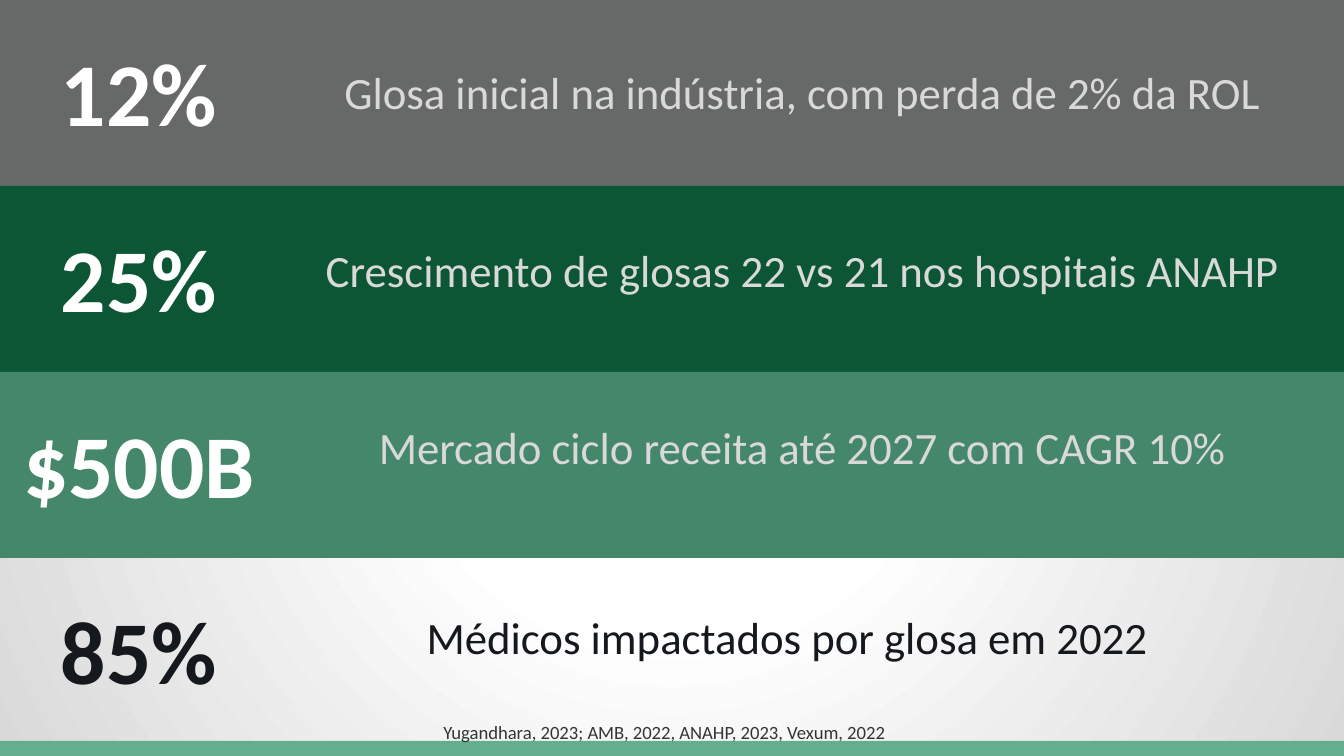
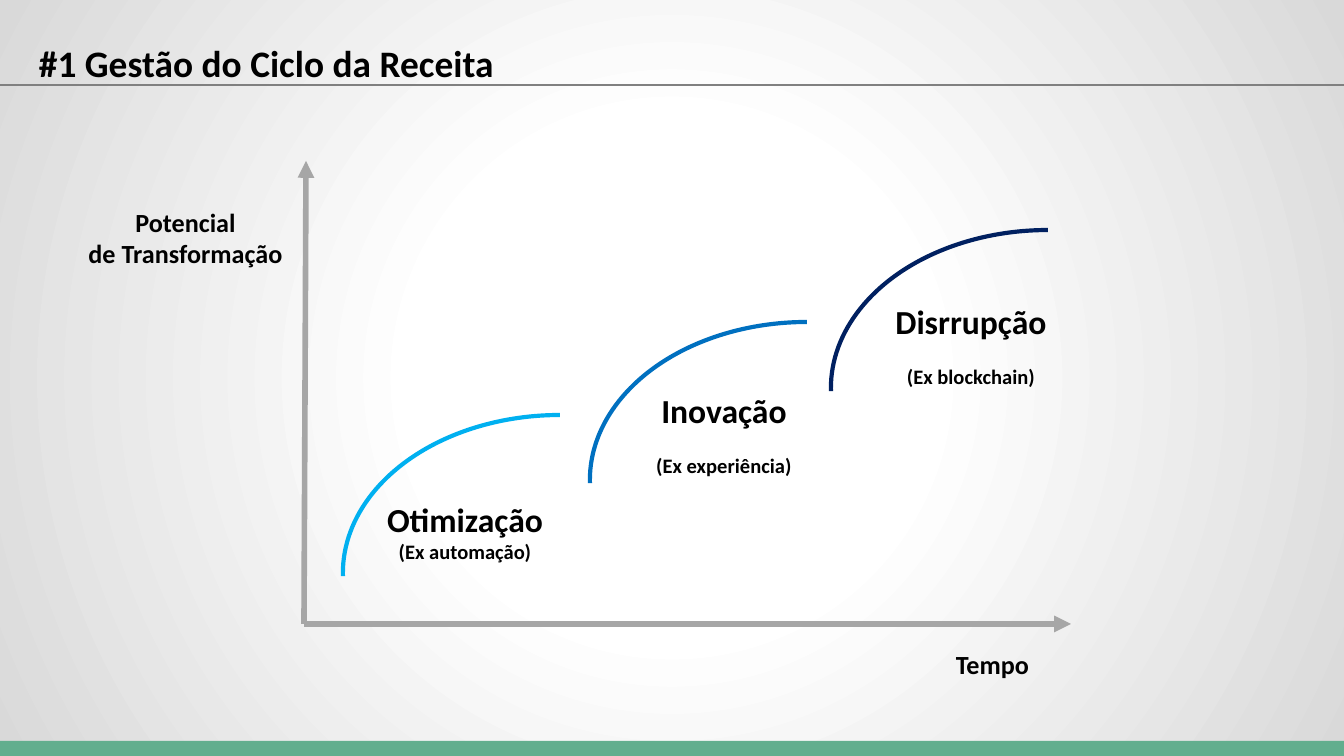
from pptx import Presentation
from pptx.dml.color import RGBColor
from pptx.enum.shapes import MSO_CONNECTOR as Link, MSO_SHAPE as Kind
from pptx.enum.text import MSO_ANCHOR as Anchor, MSO_AUTO_SIZE as Auto, PP_ALIGN as Align
from pptx.oxml import parse_xml as to_xml
from pptx.oxml.ns import nsdecls, qn
from pptx.util import Pt
from lxml.etree import SubElement as Sub

SCALE = 914400 / 134.4
WIDE, HIGH = 1344, 756
FONT = "Calibri"
WHITE, BLACK, INK, PALE = "FFFFFF", "000000", "15181C", "D9D9D9"
MINT, RULE, AXIS, NOTE = "62AE8E", "808080", "A6A6A6", "333434"
STOPS = ((0, WHITE), (33, WHITE), (100, PALE), (100, "B3B3B3"))


def px(*nums):
    return [round(n * SCALE) for n in nums]


def rgb(code):
    return RGBColor.from_string(code)


def rect(slide, box, color):
    shape = slide.shapes.add_shape(Kind.RECTANGLE, *px(*box))
    shape.shadow.inherit = False
    shape.fill.solid()
    shape.fill.fore_color.rgb = rgb(color)
    shape.line.fill.background()


def line(slide, ends, color, width, arrow=False):
    link = slide.shapes.add_connector(Link.STRAIGHT, *px(*ends))
    link.line.color.rgb = rgb(color)
    link.line.width = Pt(width)
    if arrow:
        Sub(link.line._get_or_add_ln(), qn("a:tailEnd"), type="triangle")
    Sub(link.element.spPr, qn("a:effectLst"))


def text(slide, box, words, sizes, color, bold=True, align=Align.CENTER,
         anchor=Anchor.TOP, inset=(13, 13), grow=False):
    """Add a text box; sizes holds one point size per paragraph."""
    frame = slide.shapes.add_textbox(*px(*box)).text_frame
    frame.text = words
    frame.word_wrap = True
    frame.auto_size = Auto.SHAPE_TO_FIT_TEXT if grow else Auto.NONE
    frame.vertical_anchor = anchor
    frame.margin_left = frame.margin_right = px(inset[0])[0]
    frame.margin_top = frame.margin_bottom = px(inset[1])[0]
    for para, size in zip(frame.paragraphs, sizes):
        para.alignment = align
        for run in para.runs:
            font = run.font
            font.name, font.size, font.bold = FONT, Pt(size), bold
            font.color.rgb = rgb(color)
    return frame.paragraphs


def page(deck):
    """Blank slide with the shared radial background and bottom band."""
    slide = deck.slides.add_slide(deck.slide_layouts[6])
    slide.background.fill.solid()
    stops = "".join(f'<a:gs pos="{pos * 1000}"><a:srgbClr val="{code}"/></a:gs>'
                    for pos, code in STOPS)
    grad = to_xml(
        f'<a:gradFill {nsdecls("a")} rotWithShape="1"><a:gsLst>{stops}</a:gsLst>'
        '<a:path path="circle"><a:fillToRect l="50000" t="50000" r="50000" '
        'b="50000"/></a:path></a:gradFill>')
    back = slide.element.cSld.bg.bgPr
    back.replace(back[0], grad)
    rect(slide, (0, 741, WIDE, 15), MINT)
    return slide


def fact(slide, box, fill, figure, label, shift):
    """One full-width row: a big figure and its label."""
    left, top, wide, high = box
    if fill:
        rect(slide, box, fill)
    text(slide, (left, top + 25, 278, 132), figure, [48],
         WHITE if fill else INK, anchor=Anchor.BOTTOM)
    dx, dy = shift
    para = text(slide, (left + dx, top + dy, 1095, 69), label, [24],
                PALE if fill else INK, bold=False)[0]
    para.space_before = Pt(6)
    para._p.get_or_add_pPr().set("marL", "76200")


def facts(deck):
    slide = page(deck)
    step = 186
    rows = (
        ("666967", "12%", "Glosa inicial na indústria, com perda de 2% da ROL", (249, 52)),
        ("0C5635", "25%", "Crescimento de glosas 22 vs 21 nos hospitais ANAHP", (249, 44)),
        ("45876B", "$500B", "Mercado ciclo receita até 2027 com CAGR 10%", (249, 35)),
        (None, "85%", "Médicos impactados por glosa em 2022", (234, 39)),
    )
    for i, row in enumerate(rows):
        fact(slide, (0, i * step, WIDE, step), *row)
    # Sources
    text(slide, (285, 714, 758, 36), "Yugandhara, 2023; AMB, 2022, ANAHP, 2023, Vexum, 2022",
         [10], NOTE, bold=False, inset=(13, 7), grow=True)


def head(slide, box, words):
    left, top, wide, high = box
    line(slide, (left - 4, top + high, left + wide, top + high), RULE, 0.75)
    text(slide, (left + 26, top - 44, 1238, 142), words, [20], BLACK,
         align=Align.LEFT, anchor=Anchor.BOTTOM)


def tag(slide, box, words, sizes):
    return text(slide, box, words, sizes, BLACK, inset=(7, 7), grow=True)


def stage(slide, box, color, name, sample, shift, gap):
    """A quarter curve filling the upper left of the box, with its label."""
    left, top, wide, high = box
    # The arc is drawn upright and turned about its centre
    turn = (wide - high) // 2
    arc = slide.shapes.add_shape(Kind.ARC, *px(left + turn, top - turn, high, wide))
    arc.rotation = 270
    arc.adjustments[0], arc.adjustments[1] = 161.5, 0
    arc.shadow.inherit = False
    arc.fill.background()
    arc.line.color.rgb = rgb(color)
    arc.line.width = Pt(2.25)
    dx, dy = shift
    paras = tag(slide, (left + dx, top + dy, 224, 102 + 2 * gap),
                f"{name}\n{sample}", [18, 11])
    paras[0].space_after = Pt(gap)


def graph(slide, box):
    """Axes and the three stages, from the box's top left corner."""
    left, top, wide, high = box
    base = top + high
    # Axes
    line(slide, (left, base, left + 2, top), AXIS, 3, True)
    line(slide, (left, base, left + wide, base), AXIS, 3, True)
    tag(slide, (left + 595, base + 17, 187, 46), "Tempo", [14])
    tag(slide, (left - 236, top + 38, 235, 77),
        "Potencial\nde Transformação", [14, 14])
    # Stages
    stages = (
        (39, 254, "00B0F0", "Otimização", "(Ex automação)", (10, 77), 0),
        (286, 161, "0070C0", "Inovação", "(Ex experiência)", (22, 61), 12),
        (527, 69, "002060", "Disrrupção", "(Ex blockchain)", (28, 64), 12),
    )
    for dx, dy, *rest in stages:
        stage(slide, (left + dx, top + dy, 434, 316), *rest)


def cycle(deck):
    slide = page(deck)
    head(slide, (0, 0, WIDE, 85), "#1 Gestão do Ciclo da Receita")
    graph(slide, (304, 161, 767, 463))


def main():
    deck = Presentation()
    deck.slide_width, deck.slide_height = px(WIDE, HIGH)
    facts(deck)
    cycle(deck)
    deck.save("out.pptx")


if __name__ == "__main__":
    main()
